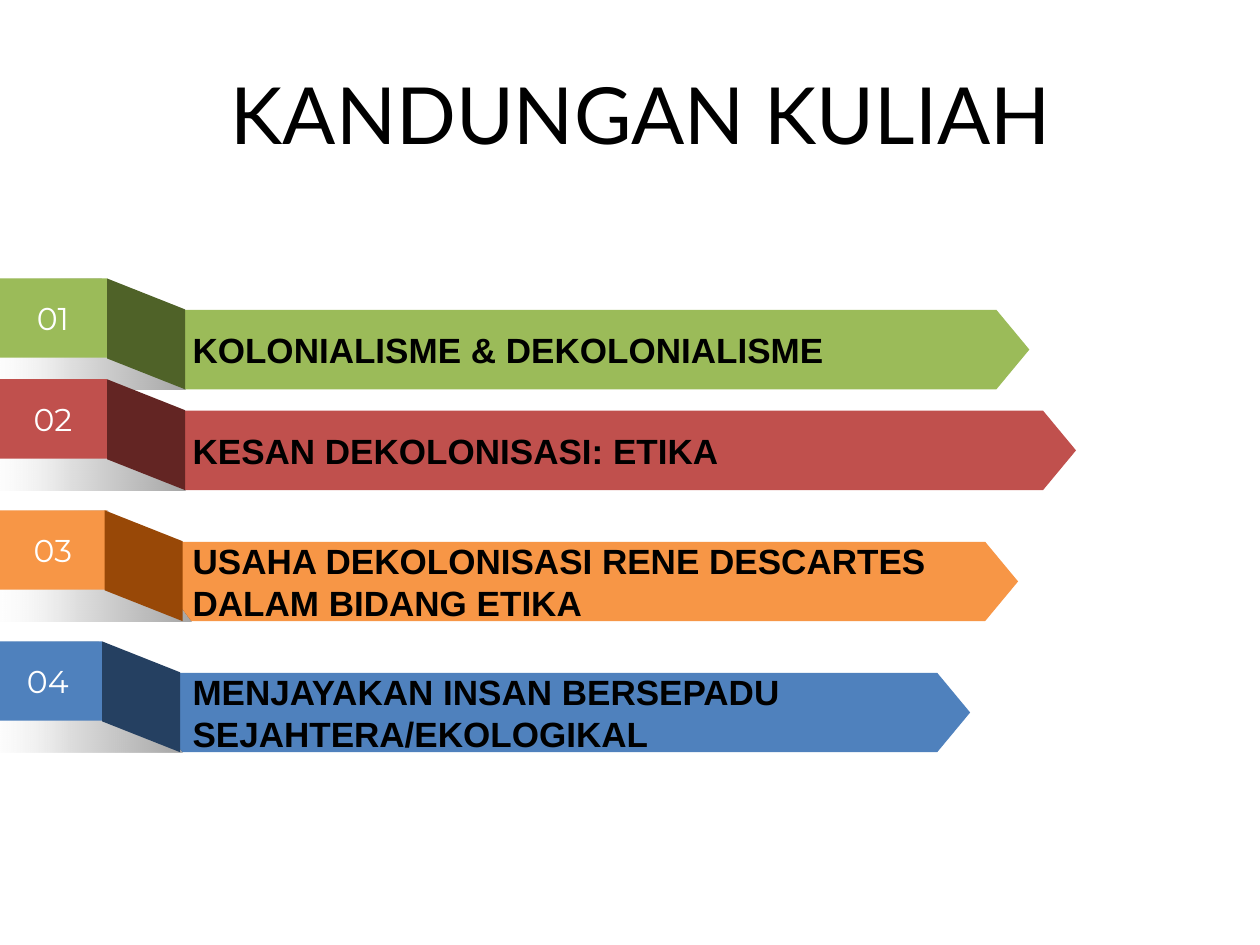
from dataclasses import dataclass

from pptx import Presentation
from pptx.dml.color import RGBColor
from pptx.enum.shapes import MSO_SHAPE
from pptx.enum.text import MSO_ANCHOR, PP_ALIGN
from pptx.oxml.ns import qn
from pptx.util import Inches, Pt
from lxml import etree

RECTANGLE = MSO_SHAPE.RECTANGLE
PENTAGON = MSO_SHAPE.PENTAGON
PARALLELOGRAM = MSO_SHAPE.PARALLELOGRAM
MIDDLE = MSO_ANCHOR.MIDDLE
LEFT, CENTER, JUSTIFY = PP_ALIGN.LEFT, PP_ALIGN.CENTER, PP_ALIGN.JUSTIFY

SLIDE_WIDTH, SLIDE_HEIGHT = Inches(10), Inches(7.5)
COLUMNS, ROWS = 100, 75
TITLE_ONLY = 5

BAND_ROWS = 6.3
DROP_ROWS = 2.5
TAB_COLUMNS = 8.6
FOLD_COLUMNS = 6.2
ARROW_COLUMN = 14.3


@dataclass(frozen=True)
class Theme:
    title_font: str = "Lato"
    number_font: str = "Montserrat"
    topic_font: str = "Arial"
    title_size: int = 45
    number_size: int = 18
    topic_size: int = 20
    dark: str = "000000"
    light: str = "FFFFFF"
    shade_stops: tuple = ((0, "A6A6A6", 100), (50, "DDDDDD", 100),
                          (93, "FFFFFF", 0), (100, "FFFFFF", 0))


@dataclass(frozen=True)
class Topic:
    lines: tuple
    row: float
    tab_column: float
    fold_column: float
    shade_column: float
    arrow_columns: float
    color: str
    fold_color: str
    align: PP_ALIGN


THEME = Theme()
TOPICS = (
    Topic(("KOLONIALISME & DEKOLONIALISME",), 22.1, -0.1, 8.5, -3,
          67.4, "9BBB59", "4F6228", JUSTIFY),
    Topic(("KESAN DEKOLONISASI: ETIKA",), 30.1, -0.1, 8.5, -3,
          71.1, "C0504D", "632523", LEFT),
    Topic(("USAHA DEKOLONISASI RENE DESCARTES", "DALAM BIDANG ETIKA"), 40.5, -0.1, 8.3, -2.5,
          66.5, "F79646", "984807", JUSTIFY),
    Topic(("MENJAYAKAN INSAN BERSEPADU SEJAHTERA/EKOLOGIKAL",), 50.9, -0.5, 8.1, -3.2,
          62.7, "4F81BD", "254061", LEFT),
)


def across(columns):
    return round(SLIDE_WIDTH * columns / COLUMNS)


def down(rows):
    return round(SLIDE_HEIGHT * rows / ROWS)


def add_block(slide, preset, column, row, columns, rows, color):
    block = slide.shapes.add_shape(preset, across(column), down(row), across(columns), down(rows))
    block.fill.solid()
    block.fill.fore_color.rgb = RGBColor.from_string(color)
    block.line.fill.background()
    block.shadow.inherit = False
    return block


def write_lines(frame, lines, align, font, size, color, bold=False):
    frame.vertical_anchor = MIDDLE
    for index, line in enumerate(lines):
        paragraph = frame.paragraphs[0] if index == 0 else frame.add_paragraph()
        paragraph.alignment = align
        run = paragraph.add_run()
        run.text = line
        run.font.name = font
        run.font.size = Pt(size)
        run.font.bold = bold
        run.font.color.rgb = RGBColor.from_string(color)


def set_insets(frame, side, edge):
    frame.word_wrap = True
    frame.margin_left = frame.margin_right = across(side)
    frame.margin_top = frame.margin_bottom = down(edge)


def add_title(slide, text):
    title = slide.shapes.title
    title.left, title.top = across(3.7), down(3)
    title.width, title.height = across(94.3), down(12)
    write_lines(title.text_frame, (text,), CENTER, THEME.title_font, THEME.title_size, THEME.dark)


def add_arrow(slide, topic):
    arrow = add_block(slide, PENTAGON, ARROW_COLUMN, topic.row + DROP_ROWS,
                      topic.arrow_columns, BAND_ROWS, topic.color)
    arrow.adjustments[0] = 0.415
    set_insets(arrow.text_frame, 1, 0.4)
    write_lines(arrow.text_frame, topic.lines, topic.align, THEME.topic_font,
                THEME.topic_size, THEME.dark, True)


def add_shade(slide, topic):
    left, top = across(topic.shade_column), down(topic.row)
    bottom = down(topic.row + BAND_ROWS + DROP_ROWS)
    builder = slide.shapes.build_freeform(left, top)
    builder.add_line_segments((
        (left + across(11), top),
        (left + across(17.7), bottom),
        (left, bottom),
    ))
    shade = builder.convert_to_shape()
    shade.line.fill.background()
    shade.shadow.inherit = False
    shade.fill.gradient()
    shade.fill.gradient_angle = 180
    stops = next(shade._element.spPr.iter(qn("a:gsLst")))
    for stop in list(stops):
        stops.remove(stop)
    for position, color, opacity in THEME.shade_stops:
        stop = etree.SubElement(stops, qn("a:gs"), pos=str(position * 1000))
        tint = etree.SubElement(stop, qn("a:srgbClr"), val=color)
        if opacity < 100:
            etree.SubElement(tint, qn("a:alpha"), val=str(opacity * 1000))


def add_tab(slide, topic, number):
    tab = add_block(slide, RECTANGLE, topic.tab_column, topic.row,
                    TAB_COLUMNS, BAND_ROWS, topic.color)
    set_insets(tab.text_frame, 0.7, 0.4)
    write_lines(tab.text_frame, (f"{number:02d}",), CENTER, THEME.number_font,
                THEME.number_size, THEME.light)


def add_fold(slide, topic):
    length = BAND_ROWS + DROP_ROWS
    turn_offset = (length - FOLD_COLUMNS) / 2
    fold = add_block(slide, PARALLELOGRAM, topic.fold_column - turn_offset,
                     topic.row + turn_offset, length, FOLD_COLUMNS, topic.fold_color)
    fold.rotation = 270
    fold.adjustments[0] = 0.396


def main():
    presentation = Presentation()
    presentation.slide_width, presentation.slide_height = SLIDE_WIDTH, SLIDE_HEIGHT
    slide = presentation.slides.add_slide(presentation.slide_layouts[TITLE_ONLY])
    for number, topic in enumerate(TOPICS, start=1):
        add_arrow(slide, topic)
        add_shade(slide, topic)
        add_tab(slide, topic, number)
        add_fold(slide, topic)
    add_title(slide, "KANDUNGAN KULIAH")
    presentation.save("out.pptx")


if __name__ == "__main__":
    main()
